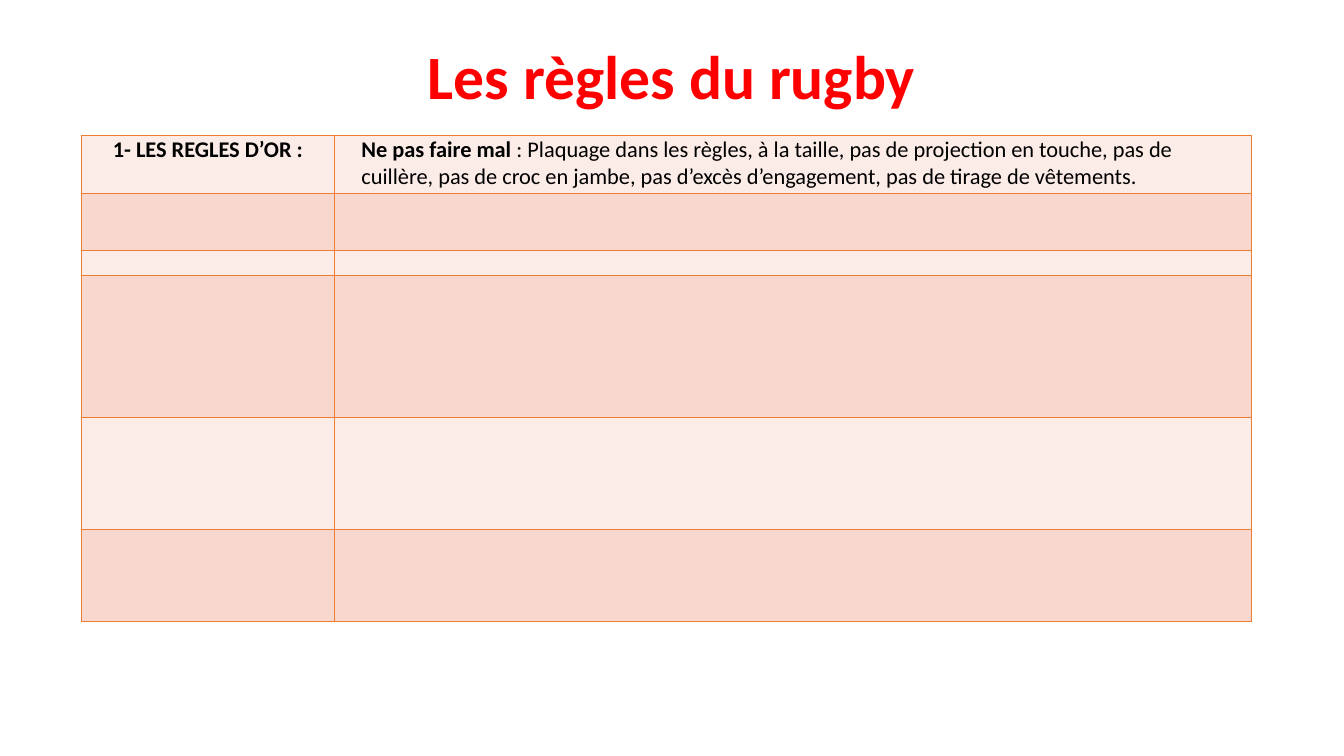
from lxml.etree import SubElement
from pptx import Presentation
from pptx.dml.color import RGBColor
from pptx.enum.text import MSO_ANCHOR, PP_ALIGN
from pptx.oxml.ns import qn
from pptx.util import Pt

# Content
TITLE = "Les règles du rugby"
HEAD = [("1- LES REGLES D’OR\u00a0:", True)]
RULE = [
    ("Ne pas faire mal", True),
    ("\u00a0: Plaquage dans les règles, à la taille, pas de projection en touche, "
     "pas de cuillère, pas de croc en jambe, pas d’excès d’engagement, "
     "pas de tirage de vêtements.", False),
]
TEXTS = {(0, 0): HEAD, (0, 1): RULE}

# Format
RED = RGBColor(0xFF, 0x00, 0x00)
BLACK = RGBColor(0x00, 0x00, 0x00)
ORANGE = RGBColor(0xED, 0x7D, 0x31)
BANDS = [RGBColor(0xFC, 0xEC, 0xE8), RGBColor(0xF8, 0xD7, 0xCE)]
BIG = {"name": "Calibri", "size": Pt(44), "bold": True}
BODY = {"name": "Calibri", "size": Pt(16)}
PADS = {"margin_left": Pt(5), "margin_right": Pt(5), "margin_top": 0, "margin_bottom": 0}
COLS = [181, 655]
ROWS = [41, 41, 18, 101, 80, 66]
LEFT, TOP = 58, 97


def apply(item, values):
    for key, value in values.items():
        setattr(item, key, value)


def write(para, text, values, color):
    run = para.add_run()
    run.text = text
    apply(run.font, values)
    run.font.color.rgb = color


def border(cell):
    props = cell._tc.get_or_add_tcPr()
    for place, side in enumerate(("a:lnL", "a:lnR", "a:lnT", "a:lnB")):
        line = SubElement(props, qn(side), w=str(Pt(1)))
        fill = SubElement(line, qn("a:solidFill"))
        SubElement(fill, qn("a:srgbClr"), val=str(ORANGE))
        props.insert(place, line)


deck = Presentation()
apply(deck, {"slide_width": Pt(960), "slide_height": Pt(540)})
slide = deck.slides.add_slide(deck.slide_layouts[6])

# Title
frame = slide.shapes.add_textbox(Pt(66), Pt(29), Pt(828), Pt(56)).text_frame
apply(frame, {"word_wrap": True, "vertical_anchor": MSO_ANCHOR.MIDDLE})
para = frame.paragraphs[0]
apply(para, {"alignment": PP_ALIGN.CENTER, "line_spacing": 0.9})
write(para, TITLE, BIG, RED)

# Table
table = slide.shapes.add_table(len(ROWS), len(COLS), Pt(LEFT), Pt(TOP),
                               Pt(sum(COLS)), Pt(sum(ROWS))).table
apply(table, {"first_row": False, "horz_banding": False})
for col, width in zip(table.columns, COLS):
    col.width = Pt(width)
for r, height in enumerate(ROWS):
    table.rows[r].height = Pt(height)
    for c in range(len(COLS)):
        cell = table.cell(r, c)
        apply(cell, PADS)
        cell.fill.solid()
        cell.fill.fore_color.rgb = BANDS[r % 2]
        border(cell)
        para = cell.text_frame.paragraphs[0]
        if (r, c) not in TEXTS:
            # Small type lets the short row keep its height
            SubElement(para._p, qn("a:endParaRPr"), sz="1000")
            continue
        para.space_before = Pt(6)
        if c == 0:
            para.alignment = PP_ALIGN.CENTER
        else:
            para._p.get_or_add_pPr().set("marL", str(Pt(14.2)))
        for text, bold in TEXTS[r, c]:
            write(para, text, {**BODY, "bold": bold}, BLACK)

deck.save("out.pptx")
